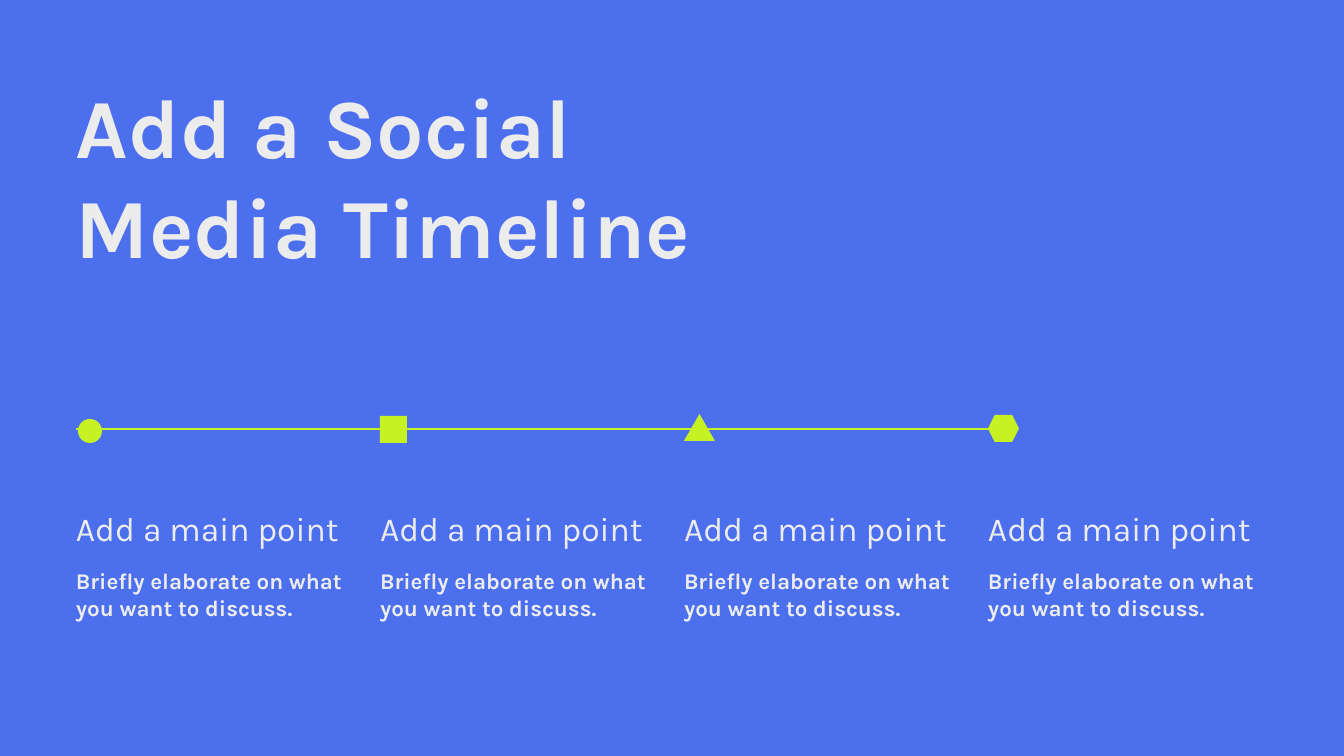
import pptx
import pptx.util
from pptx.dml.color import RGBColor
from pptx.enum.shapes import MSO_CONNECTOR, MSO_SHAPE
from lxml import etree

BLUE, LIME, PALE = "4B6FED", "C6F223", "EDECED"
FONT = "Karla"
TITLE = "Add a Social Media Timeline"
POINTS = [
    ("Add a main point", "Briefly elaborate on what you want to discuss."),
    ("Add a main point", "Briefly elaborate on what you want to discuss."),
    ("Add a main point", "Briefly elaborate on what you want to discuss."),
    ("Add a main point", "Briefly elaborate on what you want to discuss."),
]
MARKERS = [
    (MSO_SHAPE.OVAL, 2, 419, 24, 24),
    (MSO_SHAPE.RECTANGLE, 0, 416, 27, 27),
    (MSO_SHAPE.ISOSCELES_TRIANGLE, 0, 414, 31, 27),
    (MSO_SHAPE.HEXAGON, 0, 415, 31, 27),
]
LEFT, PITCH, COLUMN = 76, 304, 281
LINE_Y, LINE_END = 429, 996


def px(value):
    return pptx.util.Emu(round(value * 914400 / 134.4))


def color(code):
    return RGBColor.from_string(code)


def add_text(page, text, left, top, width, height, size, bold=False):
    box = page.shapes.add_textbox(px(left), px(top), px(width), px(height))
    frame = box.text_frame
    frame.word_wrap = True
    frame.margin_left = frame.margin_right = 0
    frame.margin_top = frame.margin_bottom = 0
    para = frame.paragraphs[0]
    para.text = text
    para.font.name = FONT
    para.font.size = pptx.util.Pt(size)
    para.font.bold = bold
    para.font.color.rgb = color(PALE)


def add_marker(page, kind, left, top, width, height):
    marker = page.shapes.add_shape(kind, px(left), px(top), px(width), px(height))
    marker.shadow.inherit = False
    marker.fill.solid()
    marker.fill.fore_color.rgb = color(LIME)
    marker.line.fill.background()


def add_timeline(page):
    line = page.shapes.add_connector(
        MSO_CONNECTOR.STRAIGHT, px(LEFT), px(LINE_Y), px(LINE_END), px(LINE_Y)
    )
    line.line.color.rgb = color(LIME)
    line.line.width = pptx.util.Pt(0.75)
    properties = line._element.spPr
    etree.SubElement(properties, pptx.oxml.ns.qn("a:effectLst"))


def main():
    deck = pptx.Presentation()
    deck.slide_width, deck.slide_height = px(1344), px(756)
    page = deck.slides.add_slide(deck.slide_layouts[6])
    page.background.fill.solid()
    page.background.fill.fore_color.rgb = color(BLUE)

    add_timeline(page)
    add_text(page, TITLE, LEFT, 74, 673, 204, 45, bold=True)
    for index, ((heading, detail), marker) in enumerate(zip(POINTS, MARKERS)):
        left = LEFT + index * PITCH
        kind, shift, top, width, height = marker
        add_marker(page, kind, left + shift, top, width, height)
        add_text(page, heading, left, 508, COLUMN, 40, 18)
        add_text(page, detail, left, 567, COLUMN, 54, 12, bold=True)

    deck.save("out.pptx")


if __name__ == "__main__":
    main()
